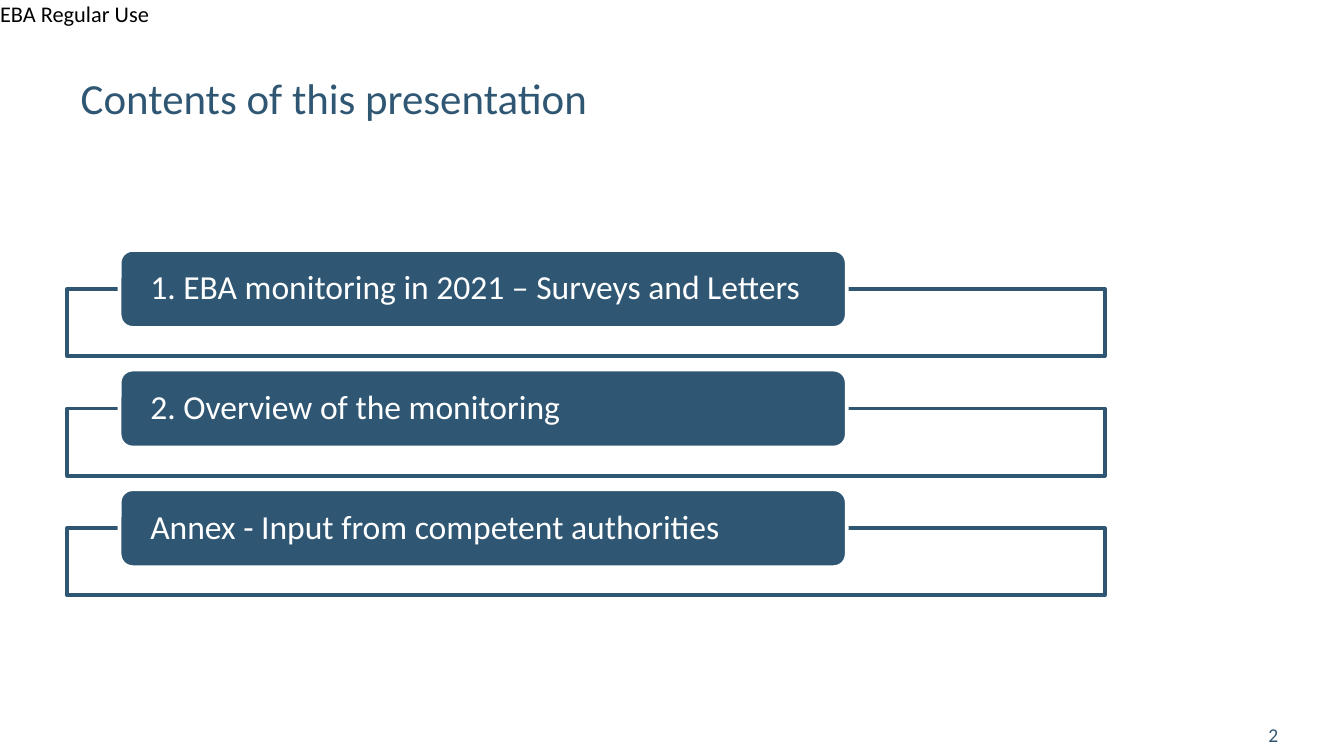
from pptx import Presentation
from pptx.dml.color import RGBColor
from pptx.enum.shapes import MSO_SHAPE
from pptx.enum.text import MSO_ANCHOR, PP_ALIGN
from pptx.oxml.ns import qn
from pptx.util import Inches, Pt
from lxml.etree import SubElement

BLUE = RGBColor(0x2F, 0x57, 0x73)
WHITE = RGBColor(0xFF, 0xFF, 0xFF)
BLACK = RGBColor(0x00, 0x00, 0x00)
FONT = "Calibri"
SECTIONS = [
    "1. EBA monitoring in 2021 – Surveys and Letters",
    "2. Overview of the monitoring",
    "Annex - Input from competent authorities",
]
FIRST_TOP = 1.86
ROW_STEP = 0.89


def write_text(shape, text, size, color, align=PP_ALIGN.LEFT):
    """Fill a shape with one formatted paragraph and return it."""
    paragraph = shape.text_frame.paragraphs[0]
    paragraph.text = text
    paragraph.alignment = align
    paragraph.font.name = FONT
    paragraph.font.size = Pt(size)
    paragraph.font.color.rgb = color
    return paragraph


def set_margins(frame, horizontal, vertical):
    """Set the inner margins of a text frame in inches."""
    frame.margin_left = frame.margin_right = Inches(horizontal)
    frame.margin_top = frame.margin_bottom = Inches(vertical)


def add_title(slide, text):
    """Place and format the title placeholder."""
    title = slide.shapes.title
    title.left, title.top = Inches(0.5), Inches(0.48)
    title.width, title.height = Inches(7.29), Inches(0.46)
    set_margins(title.text_frame, 0.1, 0.02)
    title.text_frame.vertical_anchor = MSO_ANCHOR.BOTTOM
    write_text(title, text, 23, BLUE)


def add_label(slide, text, left, top, width, height, size, color, align, margins, wrap):
    """Add a small text box."""
    label = slide.shapes.add_textbox(
        Inches(left), Inches(top), Inches(width), Inches(height)
    )
    label.text_frame.word_wrap = wrap
    set_margins(label.text_frame, *margins)
    write_text(label, text, size, color, align)


def add_box(shapes, kind, left, top, width, height, fill, line):
    """Add a filled and outlined shape without a shadow."""
    box = shapes.add_shape(
        kind, Inches(left), Inches(top), Inches(width), Inches(height)
    )
    box.shadow.inherit = False
    box.fill.solid()
    box.fill.fore_color.rgb = fill
    box.line.color.rgb = line
    box.line.width = Pt(2)
    return box


def add_section(shapes, text, top):
    """Add an outlined bar with its rounded section heading."""
    bar = add_box(shapes, MSO_SHAPE.RECTANGLE, 0.5, top + 0.29, 7.72, 0.5, WHITE, BLUE)
    fill_color = bar.element.spPr.find(qn("a:solidFill"))[0]
    SubElement(fill_color, qn("a:alpha"), val="90000")

    heading = add_box(
        shapes, MSO_SHAPE.ROUNDED_RECTANGLE, 0.89, top, 5.41, 0.58, BLUE, WHITE
    )
    set_margins(heading.text_frame, 0.2, 0)
    heading.text_frame.word_wrap = True
    heading.text_frame.vertical_anchor = MSO_ANCHOR.MIDDLE
    write_text(heading, text, 18, WHITE).line_spacing = 0.9


def main():
    """Build the contents slide."""
    presentation = Presentation()
    presentation.slide_width = Inches(10)
    presentation.slide_height = presentation.slide_width * 9 // 16
    slide = presentation.slides.add_slide(presentation.slide_layouts[5])

    add_label(slide, "EBA Regular Use", 0, 0, 1.15, 0.2, 12, BLACK,
              PP_ALIGN.LEFT, (0, 0), False)
    add_title(slide, "Contents of this presentation")
    add_label(slide, "2", 8.76, 5.33, 0.85, 0.18, 10.5, BLUE,
              PP_ALIGN.RIGHT, (0.1, 0.05), True)

    group = slide.shapes.add_group_shape()
    for row, text in enumerate(SECTIONS):
        add_section(group.shapes, text, FIRST_TOP + row * ROW_STEP)

    presentation.save("out.pptx")


if __name__ == "__main__":
    main()
